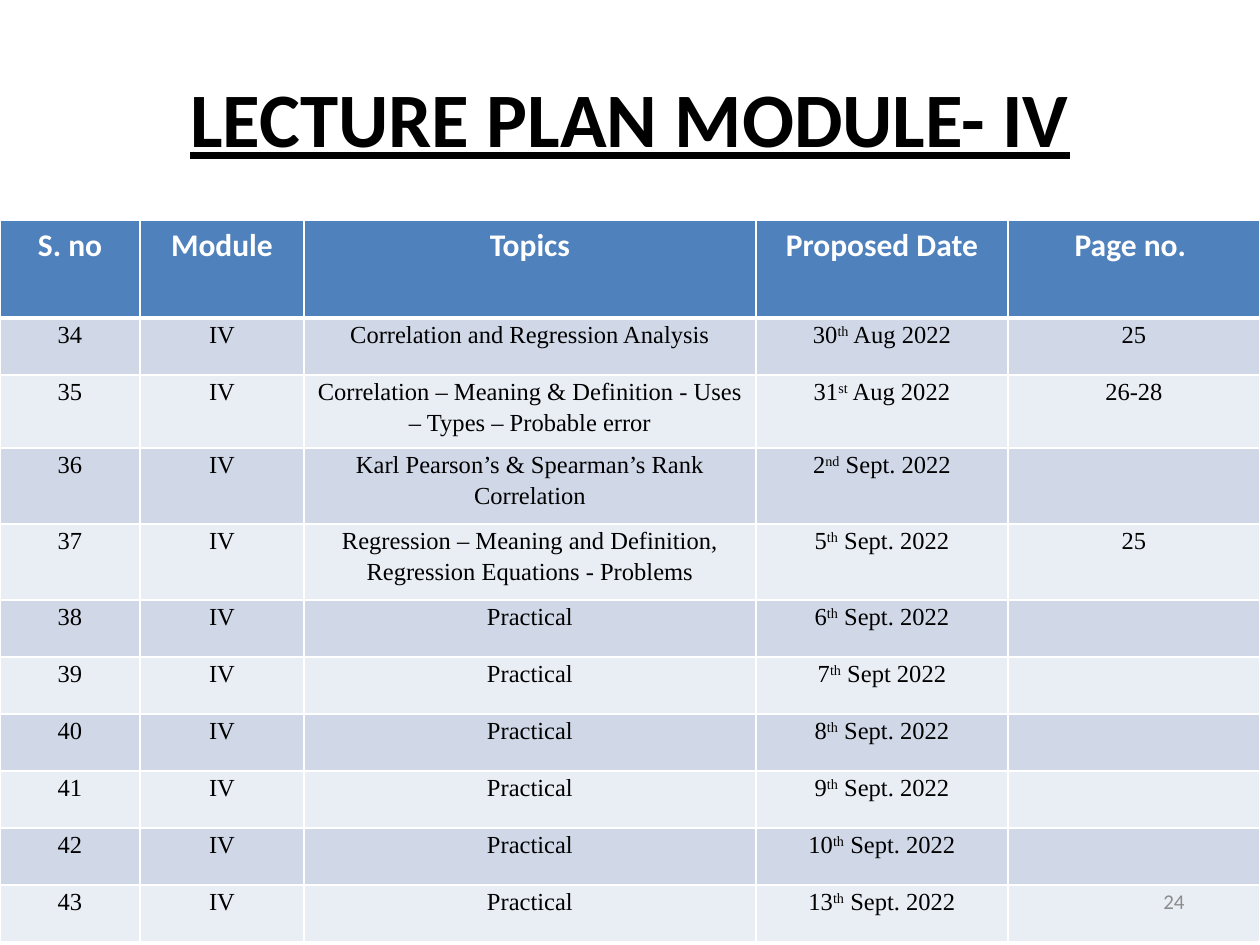
from lxml.etree import SubElement
from pptx import Presentation
from pptx.dml.color import RGBColor as RGB
from pptx.enum.text import MSO_ANCHOR as ANCHOR, PP_ALIGN as ALIGN
from pptx.oxml.ns import qn
from pptx.util import Pt

PX = 914400 / 126
COLORS = {"black": "000000", "white": "FFFFFF", "header": "4F81BD",
          "odd": "D0D8E8", "even": "E9EDF4", "number": "8C8C8C"}
HEADERS = ["S. no", "Module", "Topics", "Proposed Date", "Page no. "]
LECTURES = [
    ("Correlation and Regression Analysis", ("30", "th", " Aug 2022"), "25"),
    ("Correlation – Meaning & Definition - Uses – Types – Probable error",
     ("31", "st", " Aug 2022"), "26-28"),
    ("Karl Pearson’s & Spearman’s Rank Correlation", ("2", "nd", " Sept. 2022"), ""),
    ("Regression – Meaning and Definition, Regression Equations - Problems",
     ("5", "th", " Sept. 2022"), "25"),
    ("Practical", ("6", "th", " Sept. 2022"), ""),
    ("Practical", ("7", "th", " Sept 2022"), ""),
    ("Practical", ("8", "th", " Sept. 2022"), ""),
    ("Practical", ("9", "th", " Sept. 2022"), ""),
    ("Practical", ("10", "th", " Sept. 2022"), ""),
    ("Practical", ("13", "th", " Sept. 2022"), ""),
]
FIRST_NUMBER = 34
COL_WIDTHS = [140, 164, 452, 252, 252]
ROW_HEIGHTS = [98, 57, 73, 76, 76] + [57] * 6


def px(n):
    """Turn pixels into EMU."""
    return round(n * PX)


def write(tf, parts, size, color, font="Calibri", bold=False, underline=False,
          align=ALIGN.CENTER):
    """Write one paragraph; the second of several parts is superscript."""
    p = tf.paragraphs[0]
    p.alignment = align
    p.font.size = Pt(size)
    for i, text in enumerate(parts):
        r = p.add_run()
        r.text = text
        f = r.font
        f.name, f.size, f.bold, f.underline = font, Pt(size), bold, underline
        f.color.rgb = RGB.from_string(COLORS[color])
        if i == 1:
            r._r.get_or_add_rPr().set("baseline", "30000")
    return p


def style_cell(cell, fill, bottom=1):
    """Give a cell white borders and a solid fill."""
    tcPr = cell._tc.get_or_add_tcPr()
    for side, width in zip("LRTB", (1, 1, 1, bottom)):
        ln = SubElement(tcPr, qn(f"a:ln{side}"), w=str(Pt(width)))
        SubElement(SubElement(ln, qn("a:solidFill")), qn("a:srgbClr"),
                   val=COLORS["white"])
    cell.fill.solid()
    cell.fill.fore_color.rgb = RGB.from_string(COLORS[fill])


def add_title(slide, x, y, w, h):
    """Place and fill the title placeholder."""
    sp = slide.shapes.title
    sp.left, sp.top, sp.width, sp.height = map(px, (x, y, w, h))
    sp.text_frame.vertical_anchor = ANCHOR.MIDDLE
    write(sp.text_frame, ["LECTURE PLAN MODULE- IV"], 44, "black",
          bold=True, underline=True)


def add_plan(slide, x, y):
    """Add the lecture plan table."""
    table = slide.shapes.add_table(
        len(ROW_HEIGHTS), len(COL_WIDTHS), px(x), px(y),
        px(sum(COL_WIDTHS)), px(sum(ROW_HEIGHTS))).table
    for col, width in zip(table.columns, COL_WIDTHS):
        col.width = px(width)
    for row, height in zip(table.rows, ROW_HEIGHTS):
        row.height = px(height)
    for cell, text in zip(table.rows[0].cells, HEADERS):
        style_cell(cell, "header", bottom=3)
        write(cell.text_frame, [text], 18, "white", bold=True)
    for i, (topic, date, page) in enumerate(LECTURES):
        row = [[str(FIRST_NUMBER + i)], ["IV"], [topic], date, [page] if page else []]
        for cell, parts in zip(table.rows[i + 1].cells, row):
            style_cell(cell, "even" if i % 2 else "odd")
            cell.margin_left = cell.margin_right = px(9)
            cell.margin_top = cell.margin_bottom = 0
            p = write(cell.text_frame, parts, 14, "black", "Times New Roman")
            p.line_spacing = 1.15


def add_page_number(slide, x, y, w, h):
    """Add the page number."""
    tf = slide.shapes.add_textbox(*map(px, (x, y, w, h))).text_frame
    tf.word_wrap = True
    tf.vertical_anchor = ANCHOR.MIDDLE
    write(tf, ["24"], 12, "number", align=ALIGN.RIGHT)


def main():
    """Build and save the slide."""
    prs = Presentation()
    prs.slide_width, prs.slide_height = px(1260), px(945)
    slide = prs.slides.add_slide(prs.slide_layouts[5])
    add_title(slide, 63, 38, 1134, 158)
    add_plan(slide, 0, 220)
    add_page_number(slide, 903, 876, 294, 50)
    prs.save("out.pptx")


if __name__ == "__main__":
    main()
